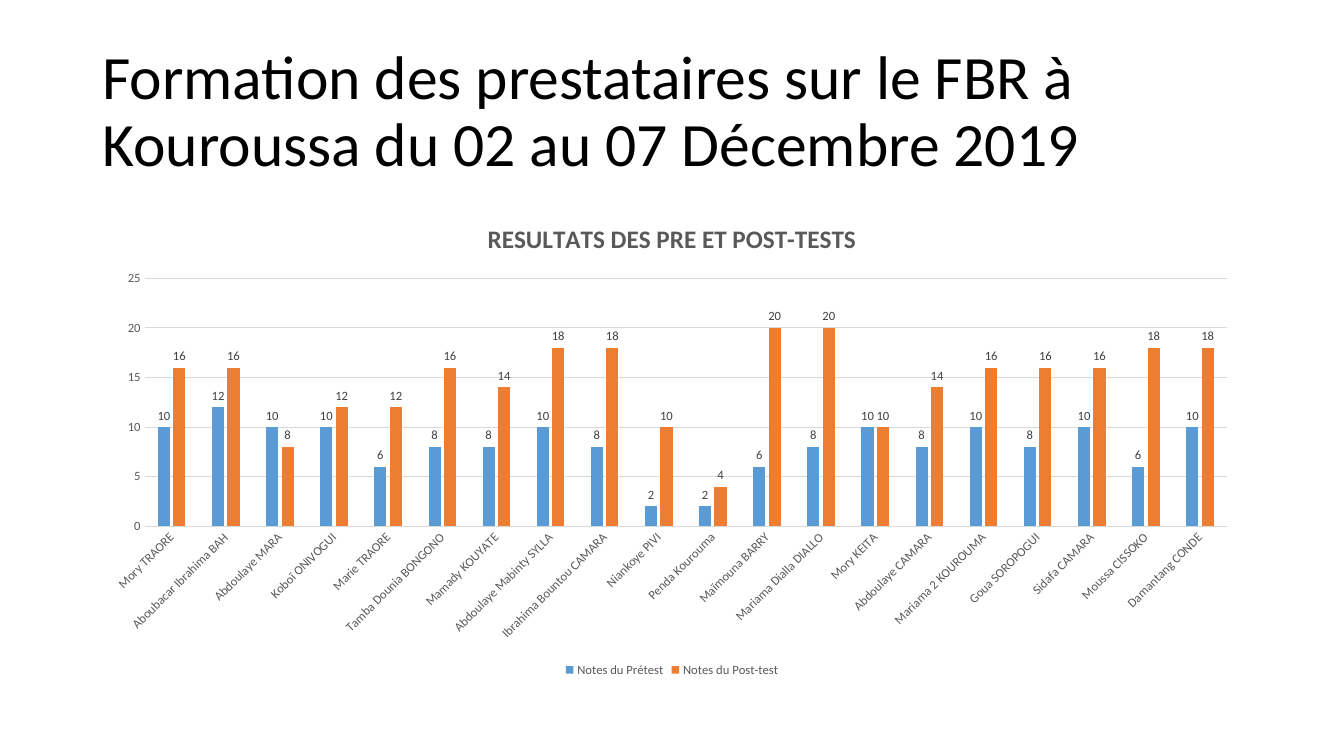
from dataclasses import dataclass

from lxml.etree import SubElement
from pptx import Presentation
from pptx.chart.data import CategoryChartData
from pptx.dml.color import RGBColor
from pptx.enum.chart import (XL_CHART_TYPE, XL_LABEL_POSITION,
                             XL_LEGEND_POSITION, XL_TICK_MARK)
from pptx.enum.text import MSO_ANCHOR
from pptx.oxml.ns import qn
from pptx.util import Cm, Pt

FONT = "Calibri"
GREY = "595959"
LIGHT_GREY = "D9D9D9"


@dataclass
class TestScores:
    name: str
    color: str
    values: list[int]


PARTICIPANTS = [
    "Mory TRAORE", "Aboubacar Ibrahima BAH", "Abdoulaye MARA",
    "Koboï ONIVOGUI", "Marie TRAORE", "Tamba Dounia BONGONO",
    "Mamady KOUYATE", "Abdoulaye Mabinty SYLLA",
    "Ibrahima Bountou CAMARA", "Niankoye PIVI", "Penda Kourouma",
    "Maïmouna BARRY", "Mariama Dialla DIALLO", "Mory KEITA",
    "Abdoulaye CAMARA", "Mariama 2 KOUROUMA", "Goua SOROPOGUI",
    "Sidafa CAMARA", "Moussa CISSOKO", "Damantang CONDE",
]
TESTS = [
    TestScores("Notes du Prétest", "5B9BD5",
               [10, 12, 10, 10, 6, 8, 8, 10, 8, 2,
                2, 6, 8, 10, 8, 10, 8, 10, 6, 10]),
    TestScores("Notes du Post-test", "ED7D31",
               [16, 16, 8, 12, 12, 16, 14, 18, 18, 10,
                4, 20, 20, 10, 14, 16, 16, 16, 18, 18]),
]


def color(value: str) -> RGBColor:
    return RGBColor.from_string(value)


def format_font(font, size: float, fill: str, bold: bool = False) -> None:
    font.name = FONT
    font.size = Pt(size)
    font.bold = bold
    font.color.rgb = color(fill)


def write(frame, text: str, *, size: float, fill: str,
          bold: bool = False, spacing: float | None = None) -> None:
    para = frame.paragraphs[0]
    para.line_spacing = spacing
    span = para.add_run()
    span.text = text
    format_font(span.font, size, fill, bold)


def format_line(line, fill: str) -> None:
    line.color.rgb = color(fill)
    line.width = Pt(0.75)


def place_plot(chart, **fractions: float) -> None:
    """Fix the inner plot area as fractions of the chart frame."""
    area = chart.plots[0]._element.getparent()
    layout = area.find(qn("c:layout"))
    if layout is None:
        layout = SubElement(area, qn("c:layout"))
        area.insert(0, layout)
    manual = SubElement(layout, qn("c:manualLayout"))
    settings = {"layoutTarget": "inner", "xMode": "edge", "yMode": "edge", **fractions}
    for name, value in settings.items():
        SubElement(manual, qn(f"c:{name}")).set("val", str(value))


def add_title(page) -> None:
    box = page.shapes.add_textbox(Cm(2.33), Cm(1.01), Cm(29.21), Cm(3.68))
    frame = box.text_frame
    frame.word_wrap = True
    frame.vertical_anchor = MSO_ANCHOR.MIDDLE
    write(frame, "Formation des prestataires sur le FBR à Kouroussa du 02 au 07 Décembre 2019",
          size=44, fill="000000", spacing=0.9)


def add_scores_chart(page) -> None:
    data = CategoryChartData()
    data.categories = PARTICIPANTS
    for test in TESTS:
        data.add_series(test.name, test.values)
    chart = page.shapes.add_chart(XL_CHART_TYPE.COLUMN_CLUSTERED, Cm(2.33), Cm(5.08),
                                  Cm(29.21), Cm(12.09), data).chart
    format_font(chart.font, 10, "000000")
    chart.has_title = True
    write(chart.chart_title.text_frame, "RESULTATS DES PRE ET POST-TESTS",
          size=18, fill=GREY, bold=True)
    place_plot(chart, x=0.045, y=0.16, w=0.934, h=0.517)

    # Columns and their values
    plot = chart.plots[0]
    plot.vary_by_categories = False
    plot.gap_width = 219
    plot.overlap = -27
    for series, test in zip(plot.series, TESTS):
        series.format.fill.solid()
        series.format.fill.fore_color.rgb = color(test.color)
        series.invert_if_negative = False
        labels = series.data_labels
        labels.show_value = True
        labels.position = XL_LABEL_POSITION.OUTSIDE_END
        format_font(labels.font, 9, "404040")

    # Axes
    names, scores = chart.category_axis, chart.value_axis
    for axis in (names, scores):
        axis.major_tick_mark = axis.minor_tick_mark = XL_TICK_MARK.NONE
        format_font(axis.tick_labels.font, 9, GREY)
    format_line(names.format.line, LIGHT_GREY)
    names._element.txPr.bodyPr.set("rot", "-2700000")
    scores.minimum_scale, scores.maximum_scale, scores.major_unit = 0, 25, 5
    scores.format.line.fill.background()
    scores.has_major_gridlines = True
    format_line(scores.major_gridlines.format.line, LIGHT_GREY)

    # Legend
    chart.has_legend = True
    chart.legend.position = XL_LEGEND_POSITION.BOTTOM
    chart.legend.include_in_layout = False
    format_font(chart.legend.font, 9, GREY)


def main() -> None:
    deck = Presentation()
    deck.slide_width, deck.slide_height = Cm(33.87), Cm(19.05)
    page = deck.slides.add_slide(deck.slide_layouts[6])
    add_title(page)
    add_scores_chart(page)
    deck.save("out.pptx")


if __name__ == "__main__":
    main()
